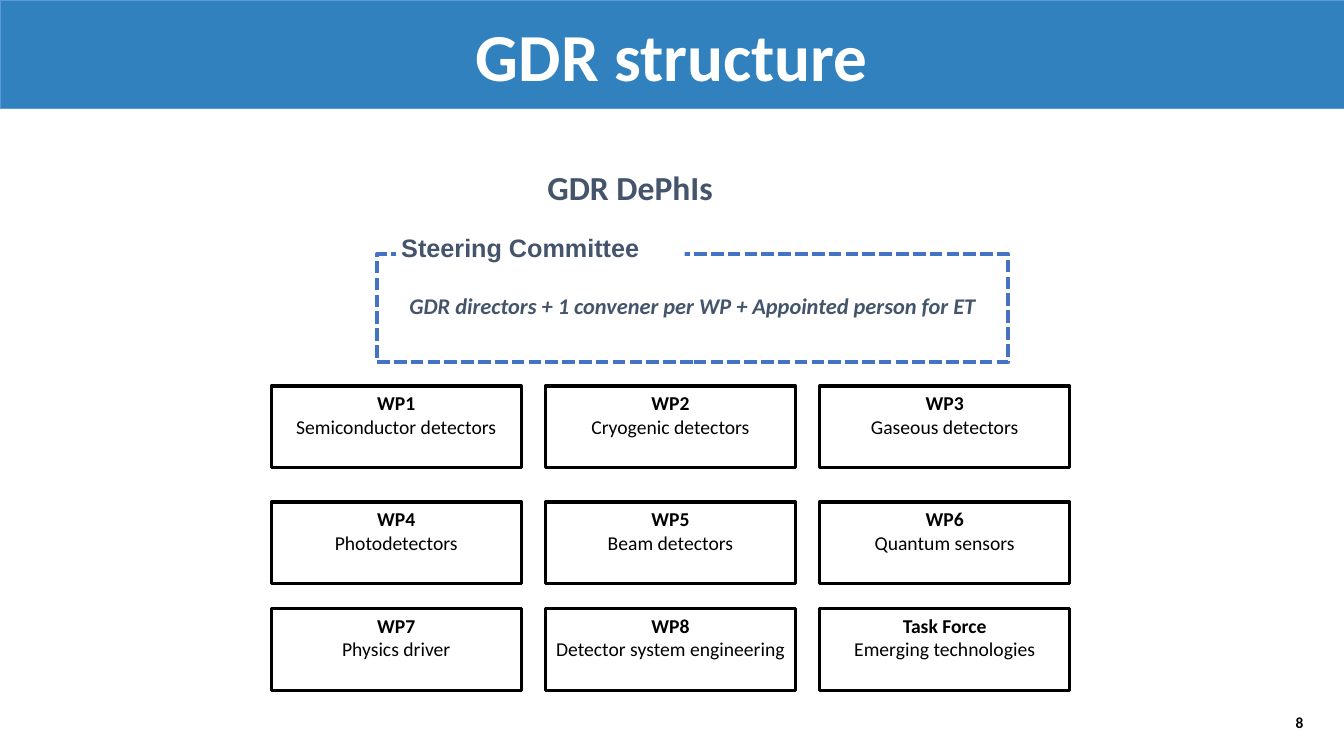
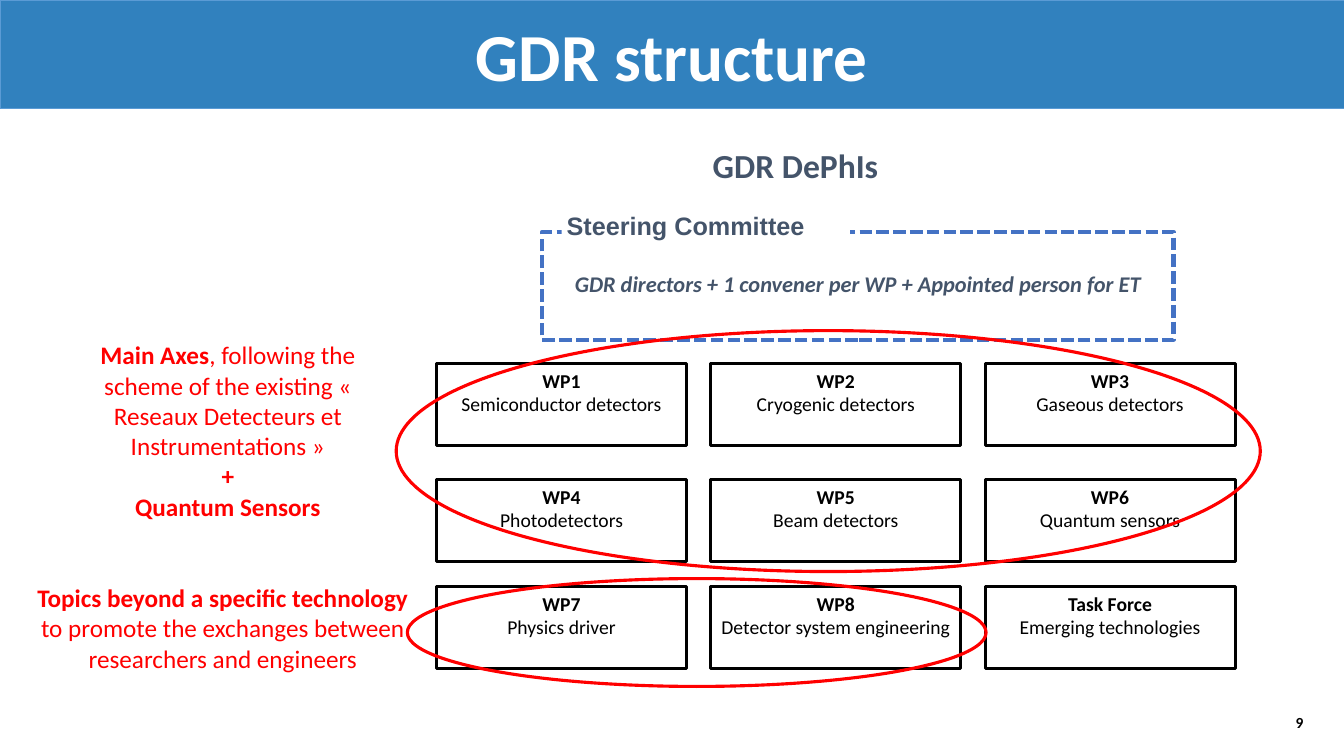
from dataclasses import dataclass

from pptx import Presentation
from pptx import util as u
from pptx.dml import color
from pptx.enum import dml, shapes, text

PX = 9144


@dataclass(frozen=True)
class Theme:
    band: str = "3181BE"
    edge: str = "5B9BD5"
    dash: str = "4472C4"
    slate: str = "44546A"
    ink: str = "000000"
    note: str = "FF0000"
    paper: str = "FFFFFF"
    font: str = "Calibri"
    label: str = "Arial"
    title: int = 48
    head: int = 24
    body: int = 18
    lead: int = 16
    card: int = 14
    page: int = 11
    hair: float = 0.5
    rule: float = 2.25
    heavy: float = 3


T = Theme()
KIND = shapes.MSO_SHAPE
CARDS = (
    ("WP1", "Semiconductor detectors"),
    ("WP2", "Cryogenic detectors"),
    ("WP3", "Gaseous detectors"),
    ("WP4", "Photodetectors"),
    ("WP5", "Beam detectors"),
    ("WP6", "Quantum sensors"),
    ("WP7", "Physics driver"),
    ("WP8", "Detector system engineering"),
    ("Task Force", "Emerging technologies"),
)
ROWS = (383, 498, 604)
LEFT, PITCH = 269, 272
AXES = (
    (
        ("Main Axes", True),
        (", following the scheme of the existing « Reseaux Detecteurs et Instrumentations »", False),
    ),
    (("+", True),),
    (("Quantum Sensors", True),),
)
TOPICS = (
    (("Topics beyond a specific technology", True),),
    (("to promote the exchanges between researchers and engineers", False),),
)


def rgb(code):
    return color.RGBColor.from_string(code)


def assign(item, form):
    for name, value in form.items():
        setattr(item, name, value)


def place(shape, box):
    names = ("left", "top", "width", "height")
    assign(shape, {name: n * PX for name, n in zip(names, box)})


def paint(shape, fill=None, line=None, width=T.rule, dash=None):
    if fill:
        shape.fill.solid()
        shape.fill.fore_color.rgb = rgb(fill)
    else:
        shape.fill.background()
    if line:
        shape.line.color.rgb = rgb(line)
        assign(shape.line, {"width": u.Pt(width), "dash_style": dash})
    else:
        shape.line.fill.background()


def write(shape, paras, size, tint, font=T.font, italic=False,
          align="CENTER", anchor="TOP", inset=5):
    frame = shape.text_frame
    form = {f"margin_{side}": inset * PX for side in ("left", "top", "right", "bottom")}
    form.update(word_wrap=True, auto_size=text.MSO_AUTO_SIZE.NONE,
                vertical_anchor=getattr(text.MSO_ANCHOR, anchor))
    assign(frame, form)
    for i, runs in enumerate(paras):
        para = frame.add_paragraph() if i else frame.paragraphs[0]
        para.alignment = getattr(text.PP_ALIGN, align)
        for words, bold in runs:
            run = para.add_run()
            run.text = words
            assign(run.font, {"name": font, "size": u.Pt(size), "bold": bold, "italic": italic})
            run.font.color.rgb = rgb(tint)


def line(words):
    return (((words, True),),)


def draw(slide, box, kind=KIND.RECTANGLE, **form):
    shape = slide.shapes.add_shape(kind, *(n * PX for n in box))
    shape.shadow.inherit = False
    paint(shape, **form)
    return shape


def label(slide, box, paras, size, tint, **form):
    shape = slide.shapes.add_textbox(*(n * PX for n in box))
    write(shape, paras, size, tint, **form)


def start(deck, title, page):
    slide = deck.slides.add_slide(deck.slide_layouts[5])
    band = slide.shapes.title
    place(band, (0, 0, 1333, 108))
    paint(band, T.band, T.edge, T.hair)
    write(band, line(title), T.title, T.paper, anchor="MIDDLE")
    label(slide, (1285, 709, 14, 17), line(str(page)), T.page, T.ink,
          align="LEFT", anchor="BOTTOM", inset=0)
    return slide


def chart(slide, dx=0, dy=0):
    def at(x, y, w, h):
        return x + dx, y + dy, w, h

    for i, (name, topic) in enumerate(CARDS):
        row, col = divmod(i, 3)
        card = draw(slide, at(LEFT + col * PITCH, ROWS[row], 248, 81), line=T.ink)
        write(card, (((name, True),), ((topic, False),)), T.card, T.ink)
    label(slide, at(518, 161, 214, 58), line("GDR DePhIs"), T.head, T.slate)
    label(slide, at(393, 285, 588, 37),
          line("GDR directors + 1 convener per WP + Appointed person for ET"),
          T.lead, T.slate, italic=True)
    draw(slide, at(374, 252, 626, 107), line=T.dash, width=T.heavy,
         dash=dml.MSO_LINE.SQUARE_DOT)
    tag = draw(slide, at(393, 226, 286, 47), fill=T.paper)
    write(tag, line("Steering Committee"), T.body, T.slate, font=T.label, align="LEFT")


def notes(slide):
    for ring, box, paras in (
        ((393, 328, 857, 239), (92, 332, 268, 192), AXES),
        ((404, 574, 574, 107), (12, 573, 418, 101), TOPICS),
    ):
        draw(slide, ring, KIND.OVAL, line=T.note)
        label(slide, box, paras, T.body, T.note)


def main():
    deck = Presentation()
    assign(deck, {"slide_width": 1333 * PX, "slide_height": 750 * PX})
    chart(start(deck, "GDR structure", 8))
    slide = start(deck, "GDR structure", 9)
    chart(slide, 164, -22)
    notes(slide)
    deck.save("out.pptx")


if __name__ == "__main__":
    main()
